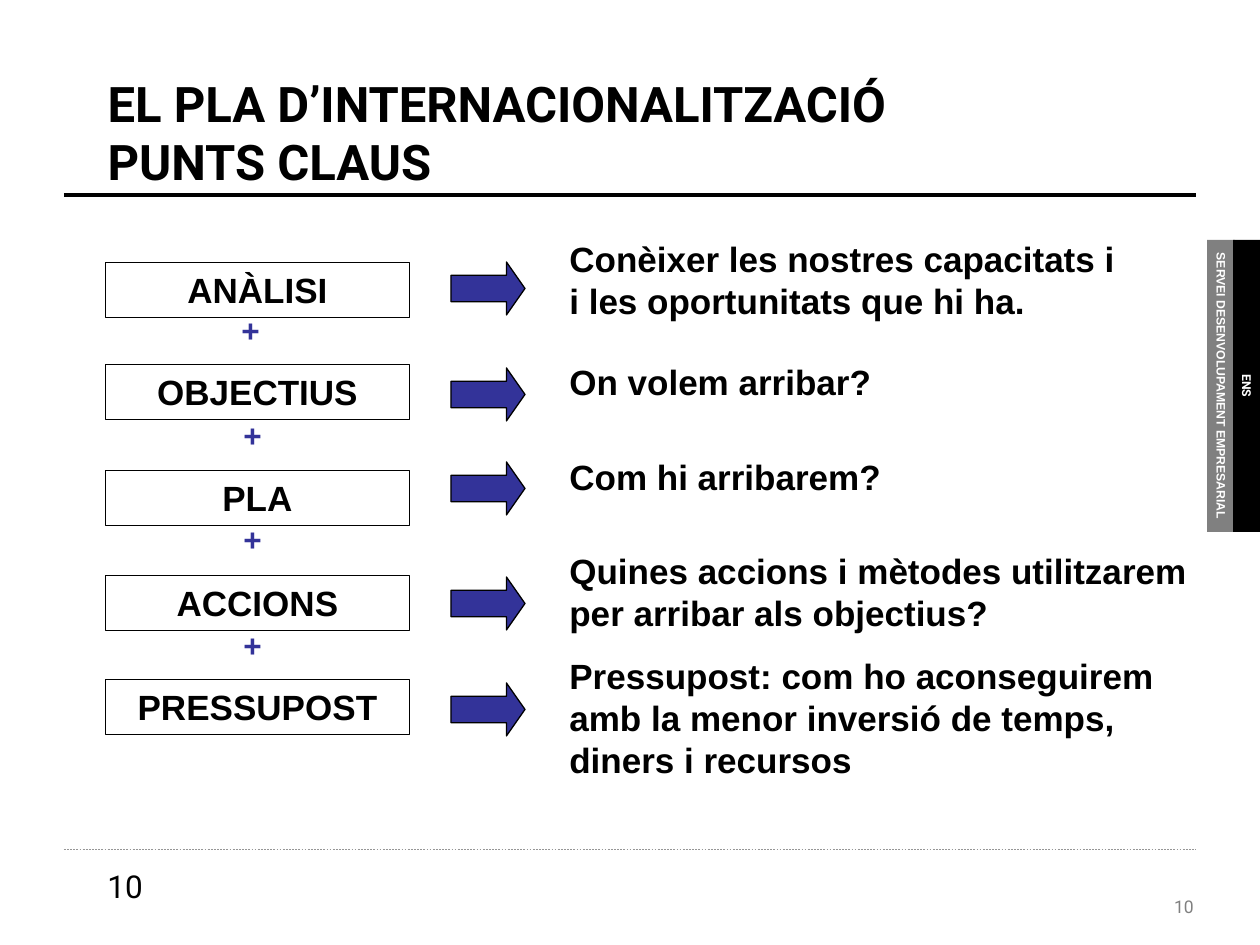
"""Build the slide on the key points of the internationalisation plan."""
from dataclasses import dataclass

from lxml import etree
from pptx import Presentation
from pptx.dml.color import RGBColor
from pptx.enum.dml import MSO_LINE
from pptx.enum.shapes import MSO_CONNECTOR, MSO_SHAPE
from pptx.enum.text import MSO_ANCHOR, MSO_AUTO_SIZE, PP_ALIGN
from pptx.oxml.ns import qn
from pptx.util import Emu, Pt

PX_PER_INCH = 126
RECTANGLE, RIGHT_ARROW = MSO_SHAPE.RECTANGLE, MSO_SHAPE.RIGHT_ARROW
STRAIGHT, DASH = MSO_CONNECTOR.STRAIGHT, MSO_LINE.DASH
TOP, MIDDLE = MSO_ANCHOR.TOP, MSO_ANCHOR.MIDDLE
LEFT, CENTER, RIGHT = PP_ALIGN.LEFT, PP_ALIGN.CENTER, PP_ALIGN.RIGHT
NO_AUTOFIT = MSO_AUTO_SIZE.NONE


@dataclass(frozen=True)
class Theme:
    black: str = "000000"
    white: str = "FFFFFF"
    grey: str = "808080"
    rule_grey: str = "969696"
    blue: str = "333399"
    heading_font: str = "Roboto"
    body_font: str = "Arial"
    title_size: int = 28
    body_size: int = 20
    sign_size: int = 18
    number_size: int = 10
    label_size: int = 7


THEME = Theme()


def text_format(font, size, color, bold=True):
    return {"name": font, "size": Pt(size), "bold": bold, "color": color}


TITLE = text_format(THEME.heading_font, THEME.title_size, THEME.black)
BODY = text_format(THEME.body_font, THEME.body_size, THEME.black)
SIGN = text_format(THEME.body_font, THEME.sign_size, THEME.blue)
PAGE = text_format(THEME.heading_font, THEME.sign_size, THEME.black, False)
NUMBER = text_format(THEME.heading_font, THEME.number_size, THEME.grey, False)
SERVICE = text_format(THEME.body_font, THEME.label_size, THEME.white)
OWNER = text_format(THEME.heading_font, THEME.label_size, THEME.white)

ANSWER_WIDTH = 672
STEPS = [
    ("ANÀLISI", 262, 262, 231, 576, 97,
     "Conèixer les nostres capacitats i\ni les oportunitats que hi ha."),
    ("OBJECTIUS", 364, 368, 354, 330, 55, "On volem arribar?"),
    ("PLA", 470, 462, 449, 340, 55, "Com hi arribarem?"),
    ("ACCIONS", 575, 577, 543, ANSWER_WIDTH, 97,
     "Quines accions i mètodes utilitzarem per arribar als objectius?"),
    ("PRESSUPOST", 679, 683, 648, ANSWER_WIDTH, 140,
     "Pressupost: com ho aconseguirem amb la menor inversió de temps, "
     "diners i recursos"),
]
PLUS_SIGNS = [(229, 305), (231, 410), (231, 514), (231, 620)]
SIDE_LABELS = [
    (1075, "SERVEI DESENVOLUPAMENT EMPRESARIAL", SERVICE, THEME.grey, TOP),
    (1101, "ENS", OWNER, THEME.black, MIDDLE),
]


def px(*lengths):
    return [Emu(round(length * 914400 / PX_PER_INCH)) for length in lengths]


class SlideBuilder:
    """Holds the theme and the current slide and draws each kind of element."""

    def __init__(self, slide, theme):
        self.slide = slide
        self.theme = theme

    def fill_text(self, frame, text, style, align=LEFT, anchor=TOP, wrap=True):
        frame.text = text
        settings = {"word_wrap": wrap, "vertical_anchor": anchor,
                    "auto_size": NO_AUTOFIT}
        for attribute, value in settings.items():
            setattr(frame, attribute, value)
        for paragraph in frame.paragraphs:
            paragraph.alignment = align
            for run in paragraph.runs:
                for attribute, value in style.items():
                    if attribute == "color":
                        run.font.color.rgb = RGBColor.from_string(value)
                    else:
                        setattr(run.font, attribute, value)

    def title(self, place, text):
        heading = self.slide.shapes.title
        for attribute, value in zip(("left", "top", "width", "height"), px(*place)):
            setattr(heading, attribute, value)
        self.fill_text(heading.text_frame, text, TITLE, anchor=MIDDLE)

    def text(self, place, text, style, **layout):
        box = self.slide.shapes.add_textbox(*px(*place))
        self.fill_text(box.text_frame, text, style, **layout)

    def shape(self, preset, place, fill=None, line_width=None):
        block = self.slide.shapes.add_shape(preset, *px(*place))
        block.shadow.inherit = False
        if fill:
            block.fill.solid()
            block.fill.fore_color.rgb = RGBColor.from_string(fill)
        else:
            block.fill.background()
        if line_width:
            block.line.color.rgb = RGBColor.from_string(self.theme.black)
            block.line.width = Pt(line_width)
        else:
            block.line.fill.background()
        return block

    def step(self, place, text):
        block = self.shape(RECTANGLE, place, line_width=0.5)
        self.fill_text(block.text_frame, text, BODY, CENTER)

    def arrow(self, place):
        block = self.shape(RIGHT_ARROW, place, self.theme.blue, 0.75)
        block.adjustments[0] = 0.5
        block.adjustments[1] = 0.35

    def side_label(self, place, text, style, fill, anchor):
        block = self.shape(RECTANGLE, place, fill)
        block.rotation = 90
        self.fill_text(block.text_frame, text, style, CENTER, anchor, wrap=False)

    def rule(self, y, color, width, dash=None):
        line = self.slide.shapes.add_connector(STRAIGHT, *px(64, y, 1196, y))
        line.line.color.rgb = RGBColor.from_string(color)
        line.line.width = Pt(width)
        if dash:
            line.line.dash_style = dash
        properties = line._element.find(qn("p:spPr"))
        etree.SubElement(properties, qn("a:effectLst"))


def main():
    presentation = Presentation()
    presentation.slide_width, presentation.slide_height = px(1260, 945)
    slide = presentation.slides.add_slide(presentation.slide_layouts[5])
    builder = SlideBuilder(slide, THEME)

    builder.rule(195, THEME.black, 2.25)
    builder.rule(849, THEME.rule_grey, 0.25, DASH)
    builder.text((988, 890, 218, 34), "10", NUMBER, align=RIGHT)
    for left, label, style, fill, anchor in SIDE_LABELS:
        builder.side_label((left, 372, 292, 28), label, style, fill, anchor)
    builder.text((95, 861, 262, 63), "10", PAGE)
    builder.title((95, 53, 1071, 158),
                  "EL PLA D’INTERNACIONALITZACIÓ \vPUNTS CLAUS")

    for name, step_y, arrow_y, answer_y, width, height, answer in STEPS:
        builder.step((105, step_y, 305, 55), name)
        builder.arrow((451, arrow_y, 74, 53))
        builder.text((557, answer_y, width, height), answer, BODY,
                     wrap=width == ANSWER_WIDTH)
    for left, top in PLUS_SIGNS:
        builder.text((left, top, 50, 63), "+", SIGN, wrap=False)

    presentation.save("out.pptx")


if __name__ == "__main__":
    main()
